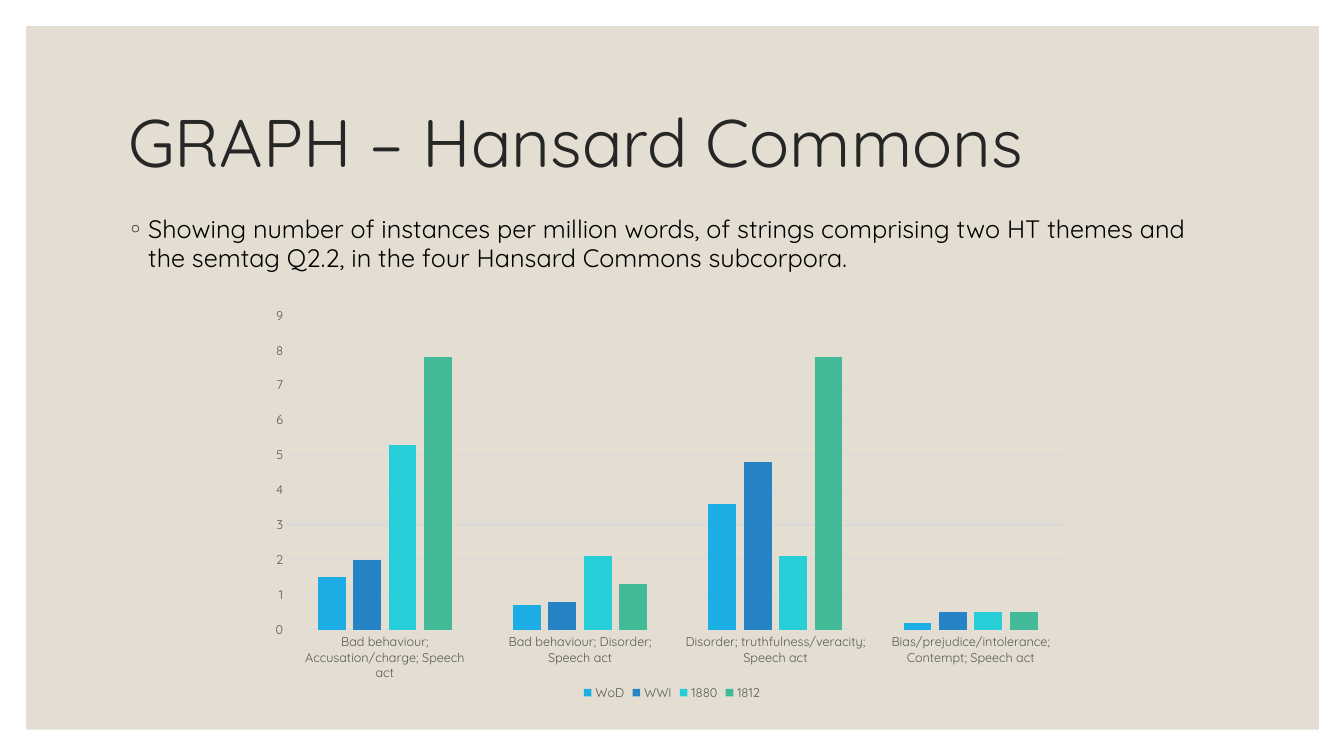
from lxml import etree
from pptx import Presentation
from pptx.chart.data import CategoryChartData
from pptx.dml.color import RGBColor
from pptx.enum.chart import XL_CHART_TYPE, XL_LEGEND_POSITION, XL_TICK_MARK
from pptx.enum.shapes import MSO_SHAPE
from pptx.enum.text import MSO_ANCHOR, MSO_AUTO_SIZE, PP_ALIGN
from pptx.oxml.ns import qn
from pptx.util import Inches, Pt

COLUMNS = XL_CHART_TYPE.COLUMN_CLUSTERED
LEGEND_BOTTOM = XL_LEGEND_POSITION.BOTTOM
NO_TICK = XL_TICK_MARK.NONE
RECT = MSO_SHAPE.RECTANGLE
TOP, MIDDLE = MSO_ANCHOR.TOP, MSO_ANCHOR.MIDDLE
NO_FIT = MSO_AUTO_SIZE.NONE
LEFT = PP_ALIGN.LEFT

FONT = "Quicksand"
COLORS = {
    "panel": "E3DED1", "title": "262626", "body": "000000",
    "label": "595959", "grid": "D9D9D9",
    "WoD": "1CADE4", "WWI": "2683C6", "1880": "27CED7", "1812": "42BA97",
}
CATEGORIES = [
    "Bad behaviour; Accusation/charge; Speech act",
    "Bad behaviour; Disorder; Speech act",
    "Disorder; truthfulness/veracity; Speech act",
    "Bias/prejudice/intolerance; Contempt; Speech act",
]
SERIES = {
    "WoD": (1.5, 0.7, 3.6, 0.2),
    "WWI": (2, 0.8, 4.8, 0.5),
    "1880": (5.3, 2.1, 2.1, 0.5),
    "1812": (7.8, 1.3, 7.8, 0.5),
}


def rgb(name):
    return RGBColor.from_string(COLORS[name])


def style_font(font, size, color):
    font.name = FONT
    font.size = Pt(size)
    font.color.rgb = rgb(color)


def style_line(line, color):
    line.color.rgb = rgb(color)
    line.width = Pt(0.75)


def place(sp, box):
    sp.left, sp.top, sp.width, sp.height = (Inches(v) for v in box)


def fill_placeholder(sp, box, text, size, color, anchor, spacing):
    place(sp, box)
    tf = sp.text_frame
    tf.word_wrap = True
    tf.auto_size = NO_FIT
    tf.vertical_anchor = anchor
    p = tf.paragraphs[0]
    p.alignment = LEFT
    p.line_spacing = spacing
    r = p.add_run()
    r.text = text
    style_font(r.font, size, color)
    return p


def add_panel(s, box):
    sp = s.shapes.add_shape(RECT, *(Inches(v) for v in box))
    sp.shadow.inherit = False
    sp.fill.solid()
    sp.fill.fore_color.rgb = rgb("panel")
    sp.line.fill.background()
    # Send behind the placeholders
    s.shapes.element.insert(2, sp.element)


def add_title(s, box):
    p = fill_placeholder(s.shapes.title, box, "GRAPH – Hansard Commons",
                         48, "title", MIDDLE, 0.9)
    p.space_before = Pt(0)


def add_body(s, box):
    text = ("Showing number of instances per million words, of strings "
            "comprising two HT themes and the semtag Q2.2, in the four "
            "Hansard Commons subcorpora.")
    p = fill_placeholder(s.placeholders[1], box, text, 18, "body", TOP, 0.95)
    p.space_before = Pt(9)
    # Hanging bullet
    pPr = p._p.get_or_add_pPr()
    pPr.set("marL", str(Inches(0.2)))
    pPr.set("indent", str(Inches(-0.2)))
    clr = etree.SubElement(pPr, qn("a:buClr"))
    etree.SubElement(clr, qn("a:srgbClr"), val=COLORS["title"])
    etree.SubElement(pPr, qn("a:buFont"), typeface=FONT)
    etree.SubElement(pPr, qn("a:buChar"), char="◦")


def add_column_chart(s, box):
    data = CategoryChartData()
    data.categories = CATEGORIES
    for name, values in SERIES.items():
        data.add_series(name, values)
    chart = s.shapes.add_chart(COLUMNS, *(Inches(v) for v in box), data).chart
    chart.has_title = False
    style_font(chart.font, 10, "body")

    # Columns
    plot = chart.plots[0]
    plot.vary_by_categories = False
    plot.gap_width = 219
    plot.overlap = -27
    for series in plot.series:
        series.format.fill.solid()
        series.format.fill.fore_color.rgb = rgb(series.name)

    # Axes
    for axis in (chart.category_axis, chart.value_axis):
        axis.major_tick_mark = axis.minor_tick_mark = NO_TICK
        style_font(axis.tick_labels.font, 9, "label")
    style_line(chart.category_axis.format.line, "grid")
    values = chart.value_axis
    values.minimum_scale, values.maximum_scale, values.major_unit = 0, 9, 1
    values.format.line.fill.background()
    values.has_major_gridlines = True
    style_line(values.major_gridlines.format.line, "grid")

    # Legend
    chart.has_legend = True
    chart.legend.position = LEGEND_BOTTOM
    chart.legend.include_in_layout = False
    style_font(chart.legend.font, 9, "label")


def main():
    prs = Presentation()
    prs.slide_width, prs.slide_height = Inches(13.33), Inches(7.5)
    s = prs.slides.add_slide(prs.slide_layouts[1])
    add_panel(s, (0.26, 0.26, 12.82, 6.98))
    add_title(s, (1.17, 0.7, 11, 1.5))
    add_body(s, (1.17, 2.09, 11, 4.3))
    add_column_chart(s, (2.57, 2.97, 8.19, 4.02))
    prs.save("out.pptx")


if __name__ == "__main__":
    main()
